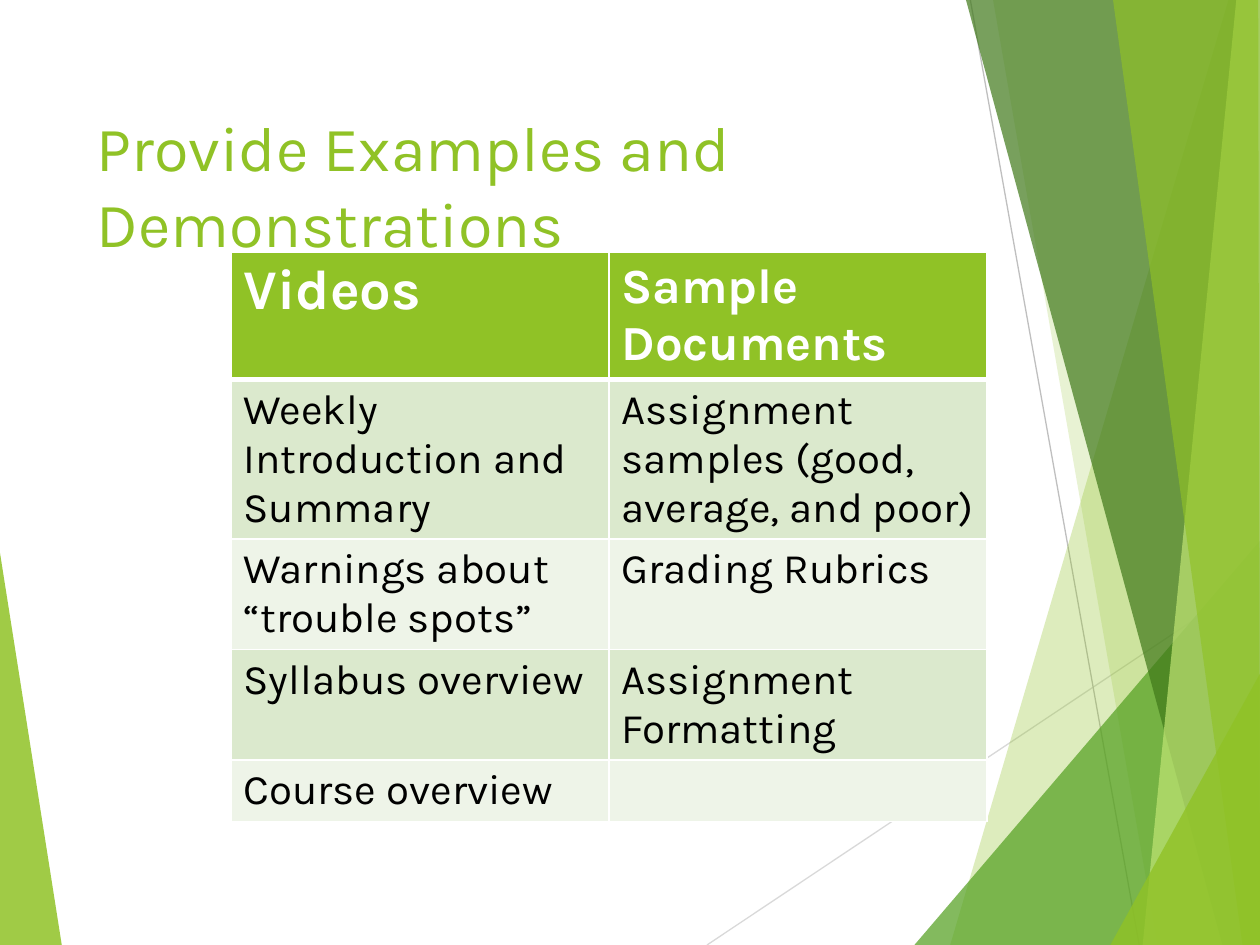
"""Build a slide with a two-column table of examples beside green facets."""

from dataclasses import dataclass

import lxml.etree
import pptx
import pptx.dml.color
import pptx.enum.shapes
import pptx.enum.text
import pptx.oxml.ns
import pptx.util

Pt = pptx.util.Pt
qn = pptx.oxml.ns.qn

FONT = "Karla"
GREEN = "90C226"
WHITE = "FFFFFF"
BLACK = "000000"
BANDS = ("DBE9CD", "EEF4E8")
HEADER_SIZES = (32, 28)
BODY_SIZE = 24
COLUMN_WIDTH = 216
ROW_HEIGHTS = (72, 91, 63, 63, 35)
ROWS = (
    ("Videos", "Sample Documents"),
    ("Weekly Introduction and Summary", "Assignment samples (good, average, and poor)"),
    ("Warnings about “trouble spots”", "Grading Rubrics"),
    ("Syllabus overview", "Assignment Formatting"),
    ("Course overview", ""),
)


@dataclass(frozen=True)
class Facet:
    points: tuple[tuple[float, float], ...]
    color: str
    opacity: int


@dataclass(frozen=True)
class Ray:
    start: tuple[float, float]
    end: tuple[float, float]
    color: str


RAYS = (
    Ray((404, 540), (720, 329), "D9D9D9"),
    Ray((554.5, 0), (651, 540), "BFBFBF"),
)
LEFT_FACET = Facet(((0, 316), (35.3, 540), (0, 540)), GREEN, 85)
RIGHT_FACETS = (
    Facet(((702, 0), (543, 540), (720, 540), (720, 0)), GREEN, 30),
    Facet(((567.5, 0), (661.5, 540), (720, 540), (720, 0)), GREEN, 20),
    Facet(((522.5, 540), (720, 309), (720, 540)), "54A021", 72),
    Facet(((552, 0), (698.5, 540), (720, 540), (720, 0)), "3F7819", 70),
    Facet(((706.5, 0), (653, 540), (720, 540), (720, 0)), "C0E474", 70),
    Facet(((636, 0), (710, 540), (720, 540), (719, 0)), GREEN, 65),
    Facet(((634.5, 540), (720, 385), (720, 540)), GREEN, 80),
)


def rgb(color: str) -> pptx.dml.color.RGBColor:
    return pptx.dml.color.RGBColor.from_string(color)


def draw_facet(slide, facet: Facet) -> None:
    corners = [(Pt(x), Pt(y)) for x, y in facet.points]
    builder = slide.shapes.build_freeform(*corners[0])
    builder.add_line_segments(corners[1:], close=True)
    shape = builder.convert_to_shape()
    shape.shadow.inherit = False
    shape.line.fill.background()
    shape.fill.solid()
    shape.fill.fore_color.rgb = rgb(facet.color)
    color = shape.element.spPr.find(qn("a:solidFill"))[0]
    lxml.etree.SubElement(color, qn("a:alpha"), val=str(facet.opacity * 1000))


def draw_ray(slide, ray: Ray) -> None:
    connector = slide.shapes.add_connector(
        pptx.enum.shapes.MSO_CONNECTOR.STRAIGHT,
        *(Pt(value) for value in ray.start + ray.end),
    )
    connector.line.color.rgb = rgb(ray.color)
    connector.line.width = Pt(0.75)
    lxml.etree.SubElement(connector.element.spPr, qn("a:effectLst"))


def set_font(paragraph, size: float, color: str, bold: bool = False) -> None:
    paragraph.font.name = FONT
    paragraph.font.size = Pt(size)
    paragraph.font.bold = bold
    paragraph.font.color.rgb = rgb(color)


def draw_title(slide, text: str) -> None:
    title = slide.shapes.title
    title.left, title.top, title.width, title.height = Pt(48), Pt(48), Pt(500), Pt(104)
    frame = title.text_frame
    frame.text = text
    frame.word_wrap = True
    frame.auto_size = pptx.enum.text.MSO_AUTO_SIZE.NONE
    frame.vertical_anchor = pptx.enum.text.MSO_ANCHOR.BOTTOM
    paragraph = frame.paragraphs[0]
    paragraph.alignment = pptx.enum.text.PP_ALIGN.LEFT
    set_font(paragraph, 36, GREEN)


def set_borders(cell, top: float, bottom: float) -> None:
    properties = cell._tc.get_or_add_tcPr()
    widths = {"lnL": 1, "lnR": 1, "lnT": top, "lnB": bottom}
    for index, (side, width) in enumerate(widths.items()):
        border = lxml.etree.Element(qn(f"a:{side}"), w=str(Pt(width)))
        fill = lxml.etree.SubElement(border, qn("a:solidFill"))
        lxml.etree.SubElement(fill, qn("a:srgbClr"), val=WHITE)
        properties.insert(index, border)


def draw_table(slide) -> None:
    table = slide.shapes.add_table(
        len(ROWS), len(ROWS[0]), Pt(132), Pt(144),
        Pt(COLUMN_WIDTH * len(ROWS[0])), Pt(sum(ROW_HEIGHTS)),
    ).table
    for column in table.columns:
        column.width = Pt(COLUMN_WIDTH)
    for row_index, (texts, height) in enumerate(zip(ROWS, ROW_HEIGHTS)):
        table.rows[row_index].height = Pt(height)
        header = row_index == 0
        for column_index, text in enumerate(texts):
            cell = table.cell(row_index, column_index)
            cell.text = text
            cell.fill.solid()
            cell.fill.fore_color.rgb = rgb(GREEN if header else BANDS[(row_index - 1) % 2])
            size = HEADER_SIZES[column_index] if header else BODY_SIZE
            set_font(cell.text_frame.paragraphs[0], size, WHITE if header else BLACK, header)
            set_borders(cell, 3 if row_index == 1 else 1, 3 if header else 1)


def main() -> None:
    presentation = pptx.Presentation()
    presentation.slide_width, presentation.slide_height = Pt(720), Pt(540)
    slide = presentation.slides.add_slide(presentation.slide_layouts[5])
    draw_facet(slide, LEFT_FACET)
    for ray in RAYS:
        draw_ray(slide, ray)
    for facet in RIGHT_FACETS:
        draw_facet(slide, facet)
    draw_title(slide, "Provide Examples and Demonstrations")
    draw_table(slide)
    presentation.save("out.pptx")


if __name__ == "__main__":
    main()
